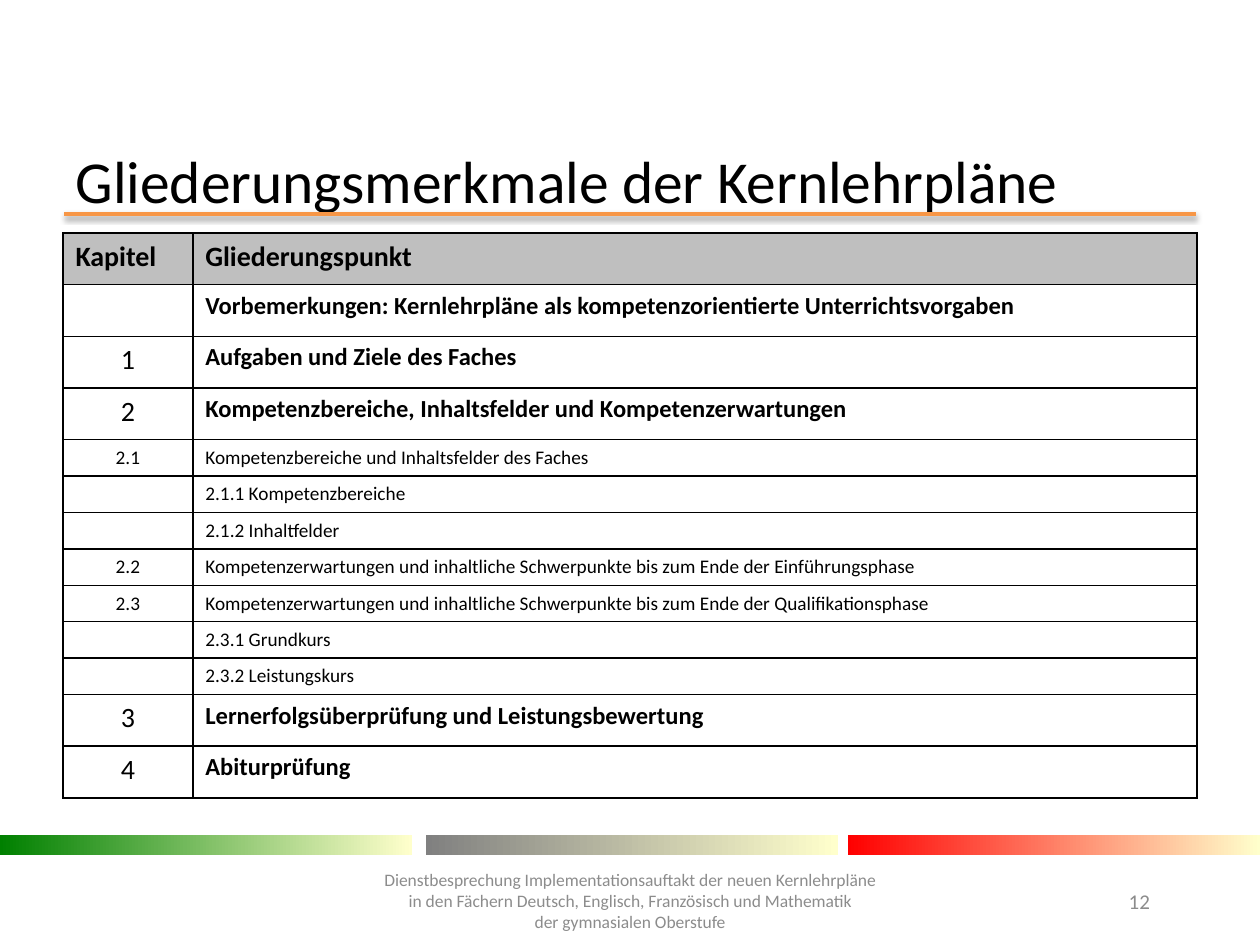
from lxml import etree
from pptx import Presentation
from pptx import util as u
from pptx.dml.color import RGBColor
from pptx.enum import shapes, text
from pptx.oxml import parse_xml
from pptx.oxml.ns import qn

COLORS = {
    "text": "000000",
    "muted": "8C8C8C",
    "header": "BFBFBF",
    "rule": "F79646",
    "green": "008000",
    "gray": "808080",
    "red": "FF0000",
    "cream": "FFFFCC",
}
FONT = "Calibri"
NAMESPACE = 'xmlns:a="http://schemas.openxmlformats.org/drawingml/2006/main"'
TALL, SHORT = 0.41, 0.28

HEADER = ("Kapitel", "Gliederungspunkt")
OUTLINE = [
    ("", "Vorbemerkungen: Kernlehrpläne als kompetenzorientierte Unterrichtsvorgaben", True),
    ("1", "Aufgaben und Ziele des Faches", True),
    ("2", "Kompetenzbereiche, Inhaltsfelder und Kompetenzerwartungen", True),
    ("2.1", "Kompetenzbereiche und Inhaltsfelder des Faches", False),
    ("", "2.1.1 Kompetenzbereiche", False),
    ("", "2.1.2 Inhaltfelder", False),
    ("2.2", "Kompetenzerwartungen und inhaltliche Schwerpunkte bis zum Ende der Einführungsphase", False),
    ("2.3", "Kompetenzerwartungen und inhaltliche Schwerpunkte bis zum Ende der Qualifikationsphase", False),
    ("", "2.3.1 Grundkurs", False),
    ("", "2.3.2 Leistungskurs", False),
    ("3", "Lernerfolgsüberprüfung und Leistungsbewertung", True),
    ("4", "Abiturprüfung", True),
]
FOOTER = (
    "Dienstbesprechung Implementationsauftakt der neuen Kernlehrpläne\v"
    "in den Fächern Deutsch, Englisch, Französisch und Mathematik\v"
    "der gymnasialen Oberstufe"
)


def rgb(name):
    return RGBColor.from_string(COLORS[name])


def write(frame, content, size, color="text", bold=False, align=text.PP_ALIGN.LEFT):
    frame.text = content
    paragraph = frame.paragraphs[0]
    paragraph.alignment = align
    for run in paragraph.runs:
        for name, value in {"name": FONT, "size": u.Pt(size), "bold": bold}.items():
            setattr(run.font, name, value)
        run.font.color.rgb = rgb(color)
    if not content:
        paragraph._p.get_or_add_endParaRPr().set("sz", str(size * 100))


def add_title(slide, left, top, width, height):
    title = slide.shapes.title
    box = {"left": left, "top": top, "width": width, "height": height}
    for name, value in box.items():
        setattr(title, name, u.Inches(value))
    write(title.text_frame, "Gliederungsmerkmale der Kernlehrpläne", 34)
    title.text_frame.vertical_anchor = text.MSO_ANCHOR.MIDDLE
    title.text_frame.auto_size = text.MSO_AUTO_SIZE.NONE


def add_title_rule(slide, left, top, width):
    rule = slide.shapes.add_connector(
        shapes.MSO_CONNECTOR.STRAIGHT,
        u.Inches(left), u.Inches(top), u.Inches(left + width), u.Inches(top),
    )
    rule.line.color.rgb = rgb("rule")
    rule.line.width = u.Pt(2)
    rule._element.spPr.append(parse_xml(
        f'<a:effectLst {NAMESPACE}><a:outerShdw blurRad="{u.Pt(3.1)}" dist="{u.Pt(1.6)}" '
        'dir="5400000" rotWithShape="0"><a:srgbClr val="000000"><a:alpha val="38000"/>'
        '</a:srgbClr></a:outerShdw></a:effectLst>'
    ))


def add_color_bars(slide, top, width, height):
    for left, color in ((0, "green"), (3.38, "gray"), (6.73, "red")):
        bar = slide.shapes.add_shape(
            shapes.MSO_SHAPE.RECTANGLE,
            u.Inches(left), u.Inches(top), u.Inches(width), u.Inches(height),
        )
        bar.shadow.inherit = False
        bar.line.fill.background()
        bar.fill.gradient()
        bar.fill.gradient_angle = 0
        for stop, name in zip(bar.fill.gradient_stops, (color, "cream")):
            stop.color.rgb = rgb(name)


def add_borders(cell):
    properties = cell._tc.get_or_add_tcPr()
    for side in ("lnL", "lnR", "lnT", "lnB"):
        line = etree.SubElement(properties, qn(f"a:{side}"), w=str(u.Pt(1)))
        fill = etree.SubElement(line, qn("a:solidFill"))
        etree.SubElement(fill, qn("a:srgbClr"), val=COLORS["text"])


def add_outline_table(slide, left, top, width, chapter_width):
    heights = [TALL] + [TALL if main else SHORT for _, _, main in OUTLINE]
    table = slide.shapes.add_table(
        len(heights), 2,
        u.Inches(left), u.Inches(top), u.Inches(width), u.Inches(sum(heights)),
    ).table
    table.first_row = table.horz_banding = False
    for column, size in zip(table.columns, (chapter_width, width - chapter_width)):
        column.width = u.Inches(size)
    for row, height in zip(table.rows, heights):
        row.height = u.Inches(height)
    for cell in table.iter_cells():
        add_borders(cell)
        cell.fill.background()
    for column, label in enumerate(HEADER):
        cell = table.cell(0, column)
        write(cell.text_frame, label, 16, bold=True)
        cell.fill.solid()
        cell.fill.fore_color.rgb = rgb("header")
    for row, (chapter, heading, main) in enumerate(OUTLINE, 1):
        write(table.cell(row, 0).text_frame, chapter, 16 if main else 11,
              align=text.PP_ALIGN.CENTER)
        write(table.cell(row, 1).text_frame, heading, 14 if main else 11, bold=main)


def add_note(slide, left, top, width, height, content, size, align, anchor):
    box = slide.shapes.add_textbox(
        u.Inches(left), u.Inches(top), u.Inches(width), u.Inches(height))
    box.text_frame.word_wrap = True
    box.text_frame.vertical_anchor = anchor
    write(box.text_frame, content, size, "muted", align=align)


def main():
    presentation = Presentation()
    presentation.slide_width = u.Inches(10)
    presentation.slide_height = u.Inches(7.5)
    slide = presentation.slides.add_slide(presentation.slide_layouts[5])
    add_title_rule(slide, 0.51, 1.7, 8.98)
    add_color_bars(slide, 6.63, 3.27, 0.16)
    add_title(slide, 0.5, 1.23, 9, 0.39)
    add_outline_table(slide, 0.5, 1.85, 9, 1.03)
    add_note(slide, 8.86, 7, 0.64, 0.4, "12", 12,
             text.PP_ALIGN.LEFT, text.MSO_ANCHOR.TOP)
    add_note(slide, 2.56, 6.87, 4.88, 0.56, FOOTER, 10,
             text.PP_ALIGN.CENTER, text.MSO_ANCHOR.MIDDLE)
    presentation.save("out.pptx")


if __name__ == "__main__":
    main()
